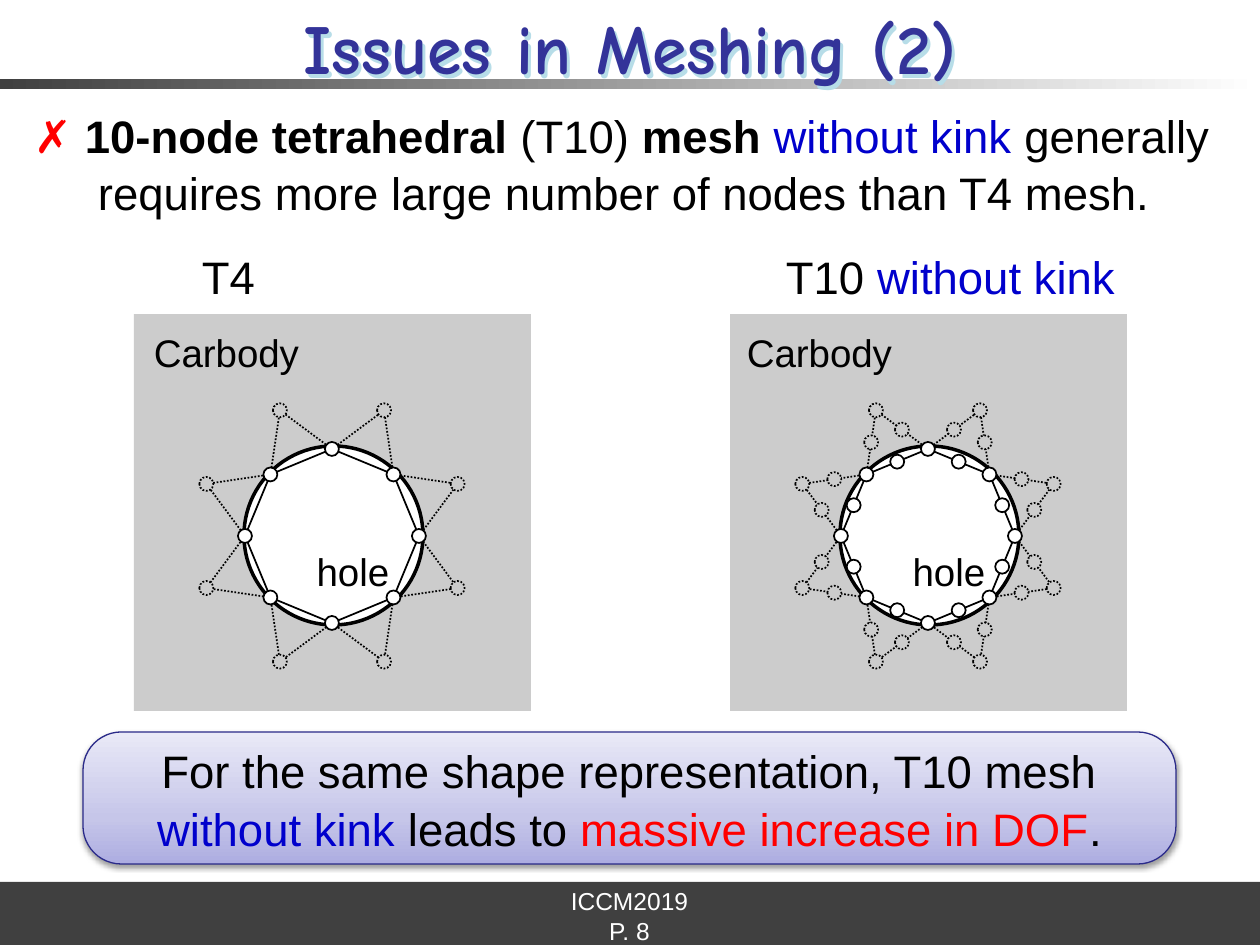
"""Build the slide on meshing issues: T4 and T10 meshes around a hole in a car body."""
from copy import deepcopy
from itertools import chain
from math import cos, radians, sin

from lxml import etree
from pptx import Presentation
from pptx import util as u
from pptx.dml.color import RGBColor
from pptx.enum import dml, shapes, text
from pptx.oxml import ns

PX = 7257
BLACK, WHITE, GRAY, DARK = "000000", "FFFFFF", "CCCCCC", "404040"
BLUE, RED, NAVY = "0000CC", "FF0000", "333399"
LEFT, CENTER = text.PP_ALIGN.LEFT, text.PP_ALIGN.CENTER


def paint(fill, colour):
    fill.solid()
    fill.fore_color.rgb = RGBColor.from_string(colour)


def write(shape, runs, size, align=CENTER, anchor=text.MSO_ANCHOR.TOP, font="Arial", wrap=True):
    frame = shape.text_frame
    frame.word_wrap = wrap
    frame.vertical_anchor = anchor
    frame.margin_left = frame.margin_right = frame.margin_top = frame.margin_bottom = 0
    paragraph = frame.paragraphs[0]
    paragraph.alignment = align
    for words, colour, bold in runs:
        if words == "\n":
            paragraph.add_line_break()
            continue
        run = paragraph.add_run()
        run.text = words
        run.font.name, run.font.size, run.font.bold = font, u.Pt(size), bold
        paint(run.font.fill, colour)
    return paragraph


deck = Presentation()
deck.slide_width, deck.slide_height = u.Inches(10), u.Inches(7.5)
slide = deck.slides.add_slide(deck.slide_layouts[6])
parts = slide.shapes
PRESET = shapes.MSO_SHAPE

rule = parts.add_shape(PRESET.RECTANGLE, 0, 79 * PX, deck.slide_width, 10 * PX)
rule.fill.gradient()
rule.fill.gradient_angle = 0
for stop, colour in zip(rule.fill.gradient_stops, (DARK, WHITE)):
    stop.color.rgb = RGBColor.from_string(colour)
footer = parts.add_shape(PRESET.RECTANGLE, 0, 882 * PX, deck.slide_width, 63 * PX)
paint(footer.fill, DARK)
for bar in (rule, footer):
    bar.line.fill.background()
    bar.shadow.inherit = False
for words, top, height in (("ICCM2019", 882, 38), ("P. 8", 917, 28)):
    label = parts.add_textbox(557 * PX, top * PX, 145 * PX, height * PX)
    write(label, [(words, WHITE, False)], 14, anchor=text.MSO_ANCHOR.MIDDLE)

title = parts.add_textbox(0, 5 * PX, deck.slide_width, 86 * PX)
write(title, [("Issues in Meshing (2)", NAVY, True)], 40, font="Comic Neue")

claim = parts.add_textbox(34 * PX, 105 * PX, 1200 * PX, 115 * PX)
claim_line = write(claim, [
    ("✗ ", RED, True), ("10-node tetrahedral ", BLACK, True), ("(T10) ", BLACK, False),
    ("mesh ", BLACK, True), ("without kink ", BLUE, False), ("generally", BLACK, False),
    ("\n", None, None),
    ("requires more large number of nodes than T4 mesh.", BLACK, False)], 26, LEFT)
claim_line.line_spacing = 1.05
indent = claim_line._p.get_or_add_pPr()
indent.set("marL", str(64 * PX))
indent.set("indent", str(-64 * PX))

middle, corner_radius, outer_radius, node = 536 * PX, 87 * PX, 136 * PX, 14 * PX
meshes = (
    (332, 152, 202, [("T4", BLACK, False)], False),
    (928, 745, 786, [("T10 ", BLACK, False), ("without kink", BLUE, False)], True),
)
for centre, body_left, heading_left, heading, has_midnodes in meshes:
    heading_box = parts.add_textbox(heading_left * PX, 249 * PX, 340 * PX, 53 * PX)
    write(heading_box, heading, 26, LEFT, wrap=False)
    body = parts.add_shape(PRESET.RECTANGLE, (centre - 198) * PX, 314 * PX, 397 * PX, 397 * PX)
    paint(body.fill, GRAY)
    body.line.fill.background()
    hole = parts.add_shape(PRESET.OVAL, (centre - 88) * PX, 446 * PX, 179 * PX, 179 * PX)
    paint(hole.fill, WHITE)
    paint(hole.line.fill, BLACK)
    hole.line.width = u.Pt(2)
    body.shadow.inherit = hole.shadow.inherit = False

    ring = [(round(centre * PX + radius * sin(radians(22.5 * step))),
             round(middle - radius * cos(radians(22.5 * step))))
            for step, radius in enumerate([corner_radius, outer_radius] * 8)]
    corners, tips = ring[::2], ring[1::2]
    next_corners = corners[1:] + corners[:1]
    inner_edges = list(zip(corners, next_corners))
    outer_edges = list(chain(zip(corners, tips), zip(tips, next_corners)))
    for edges, vertices, fill, dash in (
            (outer_edges, tips, GRAY, dml.MSO_LINE.ROUND_DOT),
            (inner_edges, corners, WHITE, dml.MSO_LINE.SOLID)):
        nodes = list(vertices)
        if has_midnodes:
            nodes += [((a + c) // 2, (b + d) // 2) for (a, b), (c, d) in edges]
        drawn = []
        for start, end in edges:
            edge = parts.add_connector(shapes.MSO_CONNECTOR.STRAIGHT, *start, *end)
            etree.SubElement(edge._element.spPr, ns.qn("a:effectLst"))
            drawn.append(edge)
        for x, y in nodes:
            dot = parts.add_shape(PRESET.OVAL, x - node // 2, y - node // 2, node, node)
            paint(dot.fill, fill)
            dot.shadow.inherit = False
            drawn.append(dot)
        for item in drawn:
            paint(item.line.fill, BLACK)
            item.line.width = u.Pt(1)
            item.line.dash_style = dash

    for words, left, top, width in (("Carbody", body_left, 329, 149),
                                    ("hole", centre - 37, 548, 116)):
        name = parts.add_textbox(left * PX, top * PX, width * PX, 47 * PX)
        write(name, [(words, BLACK, False)], 22)

callout = parts.add_shape(PRESET.ROUNDED_RECTANGLE, 83 * PX, 732 * PX, 1093 * PX, 132 * PX)
callout.adjustments[0] = 0.29
callout.fill.gradient()
callout.fill.gradient_angle = 270
stop_list = callout._element.spPr.find(ns.qn("a:gradFill")).find(ns.qn("a:gsLst"))
stop_list.insert(1, deepcopy(stop_list[0]))
for stop, (place, colour) in zip(callout.fill.gradient_stops,
                                 ((0, "E9E9F7"), (0.65, "C6C6E9"), (1, "ADADE1"))):
    stop.position = place
    stop.color.rgb = RGBColor.from_string(colour)
paint(callout.line.fill, "2A2A89")
callout.line.width = u.Pt(0.75)
message = write(callout, [
    ("For the same shape representation, T10 mesh", BLACK, False), ("\n", None, None),
    ("without kink ", BLUE, False), ("leads to", BLACK, False),
    (" massive increase in DOF", RED, False), (".", BLACK, False)],
    26, anchor=text.MSO_ANCHOR.MIDDLE)
message.line_spacing = 1.05

for shape, colour, alpha, blur, distance, angle in (
        (title, "B7DDE8", 100, 0, 2.5, 45), (callout, BLACK, 38, 3.1, 1.6, 90)):
    shape.shadow.inherit = False
    effects = shape._element.spPr.find(ns.qn("a:effectLst"))
    shadow = etree.SubElement(effects, ns.qn("a:outerShdw"), blurRad=str(u.Pt(blur)),
                              dist=str(u.Pt(distance)), dir=str(angle * 60000), rotWithShape="0")
    tint = etree.SubElement(shadow, ns.qn("a:srgbClr"), val=colour)
    etree.SubElement(tint, ns.qn("a:alpha"), val=str(alpha * 1000))

deck.save("out.pptx")
